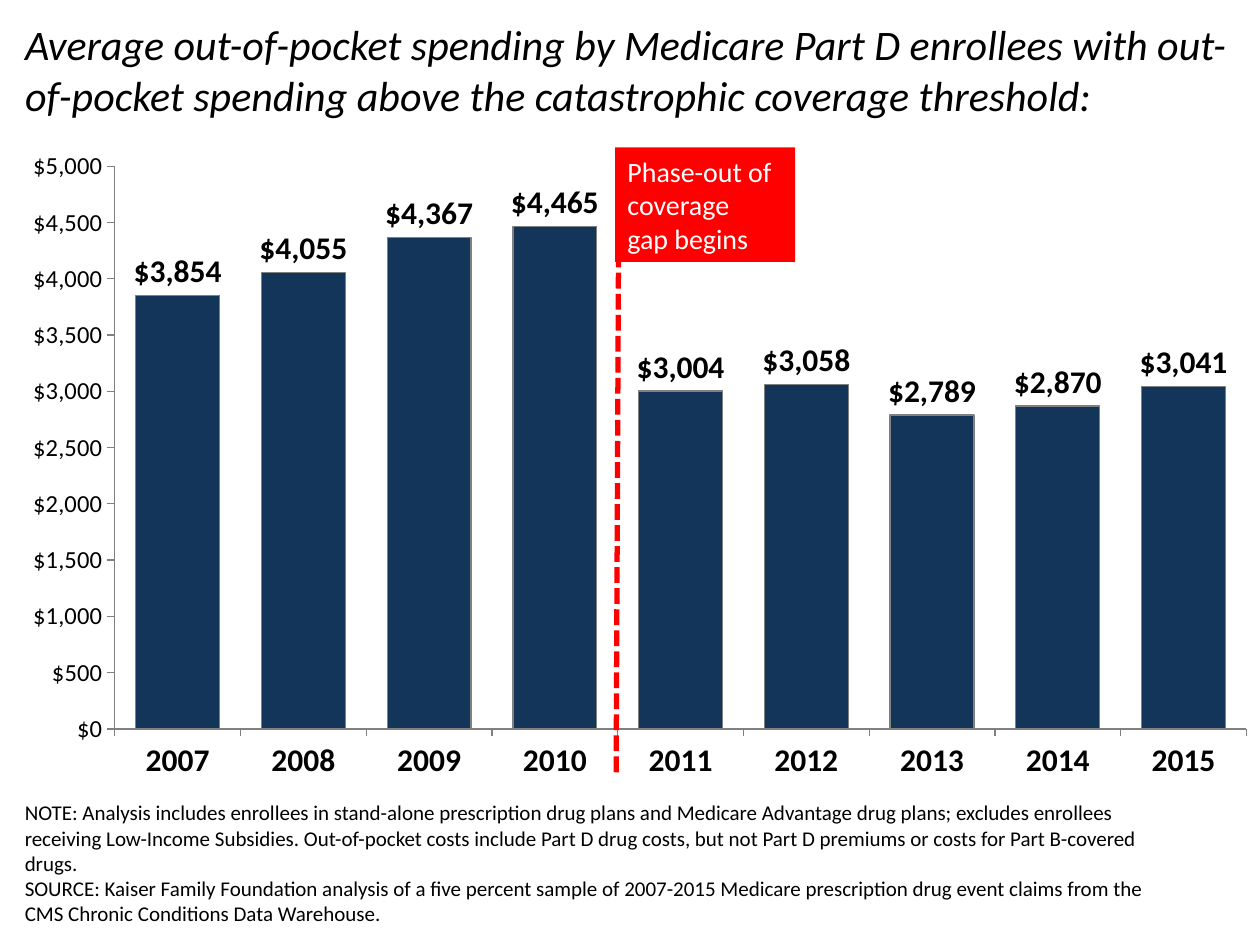
from dataclasses import dataclass

from lxml.etree import SubElement
from pptx import Presentation
from pptx.chart.data import CategoryChartData
from pptx.dml.color import RGBColor
from pptx.enum.chart import XL_CHART_TYPE, XL_LABEL_POSITION, XL_TICK_MARK
from pptx.enum.dml import MSO_LINE
from pptx.enum.shapes import MSO_CONNECTOR, MSO_SHAPE
from pptx.enum.text import MSO_ANCHOR, MSO_AUTO_SIZE, PP_ALIGN
from pptx.oxml import parse_xml
from pptx.oxml.ns import nsdecls, qn
from pptx.util import Cm, Pt


@dataclass(frozen=True)
class Theme:
    """Colours, type sizes and font of the slide."""

    font: str = "Calibri"
    black: RGBColor = RGBColor(0, 0, 0)
    white: RGBColor = RGBColor(255, 255, 255)
    navy: RGBColor = RGBColor(0x13, 0x35, 0x59)
    grey: RGBColor = RGBColor(0x80, 0x80, 0x80)
    red: RGBColor = RGBColor(255, 0, 0)
    title_size: Pt = Pt(24)
    label_size: Pt = Pt(18)
    callout_size: Pt = Pt(16)
    axis_size: Pt = Pt(14)
    note_size: Pt = Pt(12)


THEME = Theme()
DOLLARS = '"$"#,##0'
TITLE = (
    "Average out-of-pocket spending by Medicare Part D enrollees with "
    "out-of-pocket spending above the catastrophic coverage threshold:"
)
SPENDING = {
    "2007": 3854, "2008": 4055, "2009": 4367,
    "2010": 4465, "2011": 3004, "2012": 3058,
    "2013": 2789, "2014": 2870, "2015": 3041,
}
CALLOUT = ["Phase-out of coverage", "gap begins"]
NOTES = [
    "NOTE: Analysis includes enrollees in stand-alone prescription drug plans and "
    "Medicare Advantage drug plans; excludes enrollees receiving Low-Income "
    "Subsidies. Out-of-pocket costs include Part D drug costs, but not Part D "
    "premiums or costs for Part B-covered drugs.",
    "SOURCE: Kaiser Family Foundation analysis of a five percent sample of "
    "2007-2015 Medicare prescription drug event claims from the CMS Chronic "
    "Conditions Data Warehouse.",
]


def style_font(font, size, color=THEME.black, bold=False, italic=False):
    """Apply the theme font with the given size, colour and emphasis."""
    font.name = THEME.font
    font.size = size
    font.bold = bold
    font.italic = italic
    font.color.rgb = color


def write_text(shape, texts, anchor, size, color=THEME.black, italic=False):
    """Write one left-aligned paragraph for each text."""
    frame = shape.text_frame
    frame.word_wrap = True
    frame.auto_size = MSO_AUTO_SIZE.NONE
    frame.vertical_anchor = anchor
    for index, text in enumerate(texts):
        paragraph = frame.add_paragraph() if index else frame.paragraphs[0]
        paragraph.alignment = PP_ALIGN.LEFT
        run = paragraph.add_run()
        run.text = text
        style_font(run.font, size, color, italic=italic)


def add_title(slide):
    """Place and fill the title placeholder."""
    title = slide.shapes.title
    title.left, title.top = Cm(0.25), Cm(0.25)
    title.width, title.height = Cm(24.89), Cm(2.54)
    write_text(title, [TITLE], MSO_ANCHOR.TOP, THEME.title_size, italic=True)


def style_line(line, color, width):
    """Give a line its colour and width."""
    line.color.rgb = color
    line.width = width


def style_axis(axis, size, bold=False):
    """Format an axis without gridlines."""
    axis.has_major_gridlines = False
    axis.major_tick_mark = XL_TICK_MARK.OUTSIDE
    axis.minor_tick_mark = XL_TICK_MARK.NONE
    style_line(axis.format.line, THEME.grey, Pt(0.75))
    style_font(axis.tick_labels.font, size, bold=bold)


def set_plot_area(chart, left, top, width, height):
    """Fix the inner plot area as fractions of the chart."""
    plot_area = chart.plots[0]._element.getparent()
    for old in plot_area.findall(qn("c:layout")):
        plot_area.remove(old)
    layout = parse_xml(f"<c:layout {nsdecls('c')}><c:manualLayout/></c:layout>")
    settings = {
        "layoutTarget": "inner", "xMode": "edge", "yMode": "edge",
        "x": left, "y": top, "w": width, "h": height,
    }
    for name, value in settings.items():
        SubElement(layout[0], qn(f"c:{name}"), val=str(value))
    plot_area.insert(0, layout)


def add_spending_chart(slide):
    """Add the column chart of yearly spending."""
    data = CategoryChartData(number_format=DOLLARS)
    data.categories = list(SPENDING)
    data.add_series("Series 1", list(SPENDING.values()))
    chart = slide.shapes.add_chart(
        XL_CHART_TYPE.COLUMN_CLUSTERED,
        Cm(0.25), Cm(2.11), Cm(24.89), Cm(13.97), data,
    ).chart
    chart.has_title = False
    chart.has_legend = False
    style_font(chart.font, Pt(10))
    style_axis(chart.category_axis, THEME.label_size, bold=True)
    value_axis = chart.value_axis
    style_axis(value_axis, THEME.axis_size)
    value_axis.minimum_scale, value_axis.maximum_scale = 0, 5000
    value_axis.major_unit = 500
    value_axis.tick_labels.number_format = DOLLARS
    value_axis.tick_labels.number_format_is_linked = False
    plot = chart.plots[0]
    plot.gap_width = 50
    plot.vary_by_categories = False
    columns = plot.series[0]
    columns.format.fill.solid()
    columns.format.fill.fore_color.rgb = THEME.navy
    style_line(columns.format.line, THEME.grey, Pt(0.75))
    labels = columns.data_labels
    labels.show_value = True
    labels.number_format = DOLLARS
    labels.number_format_is_linked = False
    labels.position = XL_LABEL_POSITION.OUTSIDE_END
    style_font(labels.font, THEME.label_size, bold=True)
    set_plot_area(chart, 0.083, 0.089, 0.917, 0.812)


def add_notes(slide):
    """Add the note and source below the chart."""
    box = slide.shapes.add_textbox(Cm(0.25), Cm(17.27), Cm(23.11), Cm(1.52))
    write_text(box, NOTES, MSO_ANCHOR.BOTTOM, THEME.note_size)


def add_divider(slide):
    """Add the dashed line where the phase-out begins."""
    divider = slide.shapes.add_connector(
        MSO_CONNECTOR.STRAIGHT, Cm(12.47), Cm(4.65), Cm(12.42), Cm(15.67)
    )
    style_line(divider.line, THEME.red, Pt(3))
    divider.line.dash_style = MSO_LINE.SQUARE_DOT
    SubElement(divider._element.spPr, qn("a:effectLst"))


def add_callout(slide):
    """Add the red label at the top of the divider."""
    callout = slide.shapes.add_shape(
        MSO_SHAPE.RECTANGLE, Cm(12.4), Cm(2.97), Cm(3.63), Cm(2.31)
    )
    callout.shadow.inherit = False
    callout.fill.solid()
    callout.fill.fore_color.rgb = THEME.red
    callout.line.fill.background()
    write_text(callout, CALLOUT, MSO_ANCHOR.MIDDLE, THEME.callout_size, THEME.white)


def main():
    """Build and save the slide."""
    presentation = Presentation()
    presentation.slide_width, presentation.slide_height = Cm(25.4), Cm(19.05)
    slide = presentation.slides.add_slide(presentation.slide_layouts[5])
    add_spending_chart(slide)
    add_notes(slide)
    add_title(slide)
    add_divider(slide)
    add_callout(slide)
    presentation.save("out.pptx")


if __name__ == "__main__":
    main()
